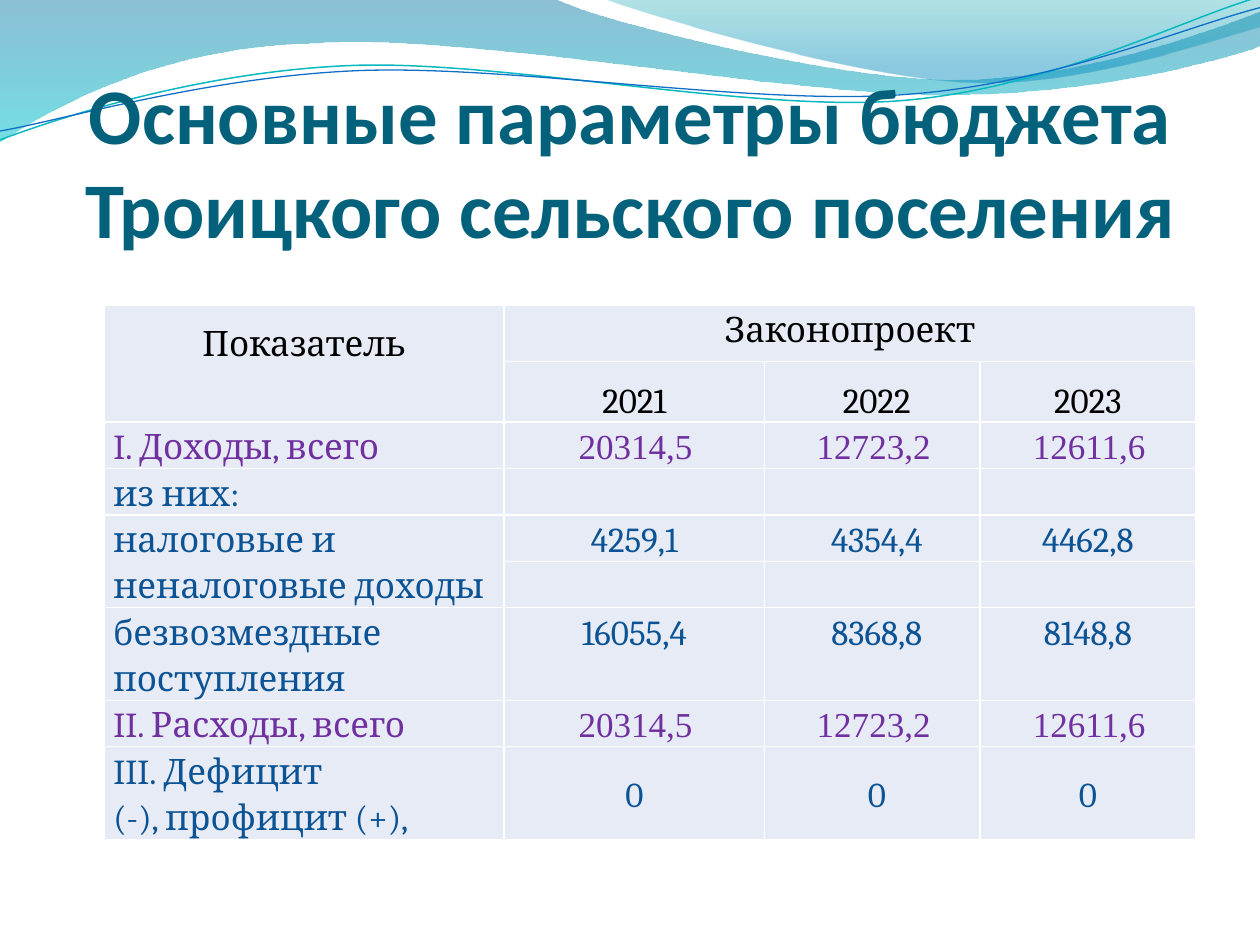
import math

from pptx import Presentation, util as u
from pptx.dml.color import RGBColor
from pptx.enum import text
from pptx.oxml import parse_xml
from pptx.oxml.ns import nsdecls, qn

THEME = {
    "title": ("Calibri", 45, "04617B"),
    "head": ("Cambria", 20, "000000"),
    "total": ("Cambria", 20, "7030A0"),
    "sum": ("Times New Roman", 20, "7030A0"),
    "item": ("Cambria", 20, "0B5394"),
    "cell": "E7EBF5",
}

TITLE = "Основные параметры бюджета Троицкого сельского поселения"
HEADING = "Показатель"
GROUP = "Законопроект"
YEARS = ["2021", "2022", "2023"]
ROWS = [
    ("I. Доходы, всего", ["20314,5", "12723,2", "12611,6"], "total"),
    ("из них:", ["", "", ""], "item"),
    ("налоговые и неналоговые доходы", ["4259,1", "4354,4", "4462,8"], "part"),
    ("", ["", "", ""], "item"),
    ("безвозмездные поступления", ["16055,4", "8368,8", "8148,8"], "part"),
    ("II. Расходы, всего", ["20314,5", "12723,2", "12611,6"], "total"),
    ("III. Дефицит\n(-), профицит (+),", ["0", "0", "0"], "balance"),
]
INDENTS = {
    "head": (0, 0.07, 0),
    "total": (0.02, 0.02, 0.02),
    "item": (0, 0, 0),
    "part": (-0.07, 0.07, -0.07),
    "balance": (0, 0.07, 0),
}
COLUMN_WIDTHS = [3.17, 2.07, 1.71, 1.71]
ROW_HEIGHTS = [0.45, 0.38, 0.31, 0.31, 0.31, 0.33, 0.64, 0.31, 0.64]

BANDS = [
    ([(0, 0), (4.4, -0.01),
      (4.76, 0.17, 6.64, 0.63, 7.58, 0.63), (8.53, 0.63, 9.58, 0.26, 10, 0.09),
      (10.01, 0.36),
      (9.83, 0.44, 8.7, 0.76, 7.46, 0.75), (6.22, 0.75, 3.82, 0.28, 2.57, 0.34),
      (1.29, 0.36, 0.46, 0.83, -0.01, 1.13)],
     [(0, "0074A1", 45), (1, "00C6CF", 55)]),
    ([(4.79, -0.01), (5.09, 0.11, 6.82, 0.62, 7.69, 0.65),
      (8.56, 0.69, 9.61, 0.32, 10, 0.21), (10, 0)],
     [(0, "00A1A9", 30), (0.8, "008BBF", 45)]),
]
WAVES = [
    ([(0, 1.11), (0.48, 0.93, 1.58, 0.57, 2.77, 0.52),
      (3.95, 0.47, 5.93, 0.89, 7.13, 0.8), (8.33, 0.71, 9.38, 0.15, 9.98, -0.02)],
     "0AB8BF", 0.85),
    ([(0, 1.04), (0.47, 0.96, 1.64, 0.61, 2.83, 0.56),
      (4.03, 0.51, 5.97, 0.84, 7.17, 0.75), (8.36, 0.67, 9.41, 0.21, 10, 0.06)],
     "0F6FC6", 0.75),
]
WAVE_TILT = -2.7
WAVE_CENTER = (4.99, 0.58)
UNITS = 1000


def pairs(segment):
    return list(zip(segment[::2], segment[1::2]))


def add_outline(slide, segments, close):
    ends = [tuple(value * UNITS for value in segment[-2:]) for segment in segments]
    builder = slide.shapes.build_freeform(*ends[0], scale=u.Inches(1) / UNITS)
    builder.add_line_segments(ends[1:], close=close)
    outline = builder.convert_to_shape()
    outline.shadow.inherit = False
    left, top = (min(axis) for axis in zip(*ends))
    sides = list(outline._element.iter(qn("a:lnTo")))
    for side, segment in zip(sides, segments[1:]):
        if len(segment) == 6:
            points = "".join(
                f'<a:pt x="{round(x * UNITS - left)}" y="{round(y * UNITS - top)}"/>'
                for x, y in pairs(segment))
            curve = f'<a:cubicBezTo {nsdecls("a")}>{points}</a:cubicBezTo>'
            side.getparent().replace(side, parse_xml(curve))
    return outline


def add_band(slide, segments, stops):
    band = add_outline(slide, segments, True)
    band.line.fill.background()
    band.fill.gradient()
    band.fill.gradient_angle = 270
    for stop, (position, color, _) in zip(band.fill.gradient_stops, stops):
        stop.position = position
        stop.color.rgb = RGBColor.from_string(color)
    colors = band._element.spPr.iter(qn("a:srgbClr"))
    for color, (_, _, opacity) in zip(colors, stops):
        color.append(parse_xml(f'<a:alpha {nsdecls("a")} val="{opacity * 1000}"/>'))


def level(segment):
    angle = math.radians(-WAVE_TILT)
    values = []
    for x, y in pairs(segment):
        dx, dy = x - WAVE_CENTER[0], y - WAVE_CENTER[1]
        values += [WAVE_CENTER[0] + dx * math.cos(angle) - dy * math.sin(angle),
                   WAVE_CENTER[1] + dx * math.sin(angle) + dy * math.cos(angle)]
    return values


def add_wave(slide, segments, color, width):
    wave = add_outline(slide, [level(segment) for segment in segments], False)
    wave.rotation = WAVE_TILT
    wave.fill.background()
    wave.line.color.rgb = RGBColor.from_string(color)
    wave.line.width = u.Pt(width)


def style(paragraph, role, align, spacing=None, indent=0):
    name, size, color = THEME[role]
    paragraph.font.name = name
    paragraph.font.size = u.Pt(size)
    paragraph.font.color.rgb = RGBColor.from_string(color)
    paragraph.alignment = align
    paragraph.line_spacing = spacing
    if indent:
        paragraph._p.get_or_add_pPr().set("indent", str(u.Inches(indent)))


def write(cell, words, role, align=text.PP_ALIGN.CENTER, spacing=1.15, indent=0,
          anchor=text.MSO_ANCHOR.TOP):
    cell.text = words
    cell.vertical_anchor = anchor
    for paragraph in cell.text_frame.paragraphs:
        style(paragraph, role, align, spacing, indent)


def add_title(slide):
    title = slide.shapes.title
    title.left, title.top, title.width, title.height = map(u.Inches, (0.5, 0.77, 9, 1.25))
    frame = title.text_frame
    frame.text = TITLE
    frame.word_wrap = True
    frame.auto_size = text.MSO_AUTO_SIZE.NONE
    frame.vertical_anchor = text.MSO_ANCHOR.BOTTOM
    frame.margin_left = frame.margin_right = frame.margin_bottom = 0
    frame.margin_top = u.Inches(0.05)
    style(frame.paragraphs[0], "title", text.PP_ALIGN.CENTER)
    frame.paragraphs[0].font.bold = True
    slide.shapes._spTree.append(title._element)


def add_budget(slide):
    budget = slide.shapes.add_table(
        len(ROW_HEIGHTS), len(COLUMN_WIDTHS), u.Inches(0.83), u.Inches(2.42),
        u.Inches(sum(COLUMN_WIDTHS)), u.Inches(sum(ROW_HEIGHTS))).table
    budget.first_row = budget.horz_banding = False
    for column, width in zip(budget.columns, COLUMN_WIDTHS):
        column.width = u.Inches(width)
    for row, height in zip(budget.rows, ROW_HEIGHTS):
        row.height = u.Inches(height)
    for cell in budget.iter_cells():
        cell.fill.solid()
        cell.fill.fore_color.rgb = RGBColor.from_string(THEME["cell"])
        cell.margin_left = cell.margin_right = u.Inches(0.07)
        cell.margin_top = cell.margin_bottom = 0

    budget.cell(0, 0).merge(budget.cell(1, 0))
    budget.cell(0, 1).merge(budget.cell(0, 3))
    budget.cell(4, 0).merge(budget.cell(5, 0))
    write(budget.cell(0, 0), HEADING, "head", spacing=1.5, indent=-0.07)
    write(budget.cell(0, 1), GROUP, "head")
    for column, (year, indent) in enumerate(zip(YEARS, INDENTS["head"]), 1):
        write(budget.cell(1, column), year, "head", spacing=1.5, indent=indent)

    middle, top = text.MSO_ANCHOR.MIDDLE, text.MSO_ANCHOR.TOP
    for row, (label, amounts, kind) in enumerate(ROWS, 2):
        is_total = kind == "total"
        if label:
            write(budget.cell(row, 0), label, "total" if is_total else "item",
                  align=text.PP_ALIGN.LEFT, anchor=middle if is_total else top)
        for column, (amount, indent) in enumerate(zip(amounts, INDENTS[kind]), 1):
            write(budget.cell(row, column), amount, "sum" if is_total else "item",
                  indent=indent, anchor=middle if kind == "balance" else top)


def main():
    deck = Presentation()
    deck.slide_width, deck.slide_height = u.Inches(10), u.Inches(7.5)
    slide = deck.slides.add_slide(deck.slide_layouts[5])
    for band in BANDS:
        add_band(slide, *band)
    for wave in WAVES:
        add_wave(slide, *wave)
    add_title(slide)
    add_budget(slide)
    deck.save("out.pptx")


if __name__ == "__main__":
    main()
